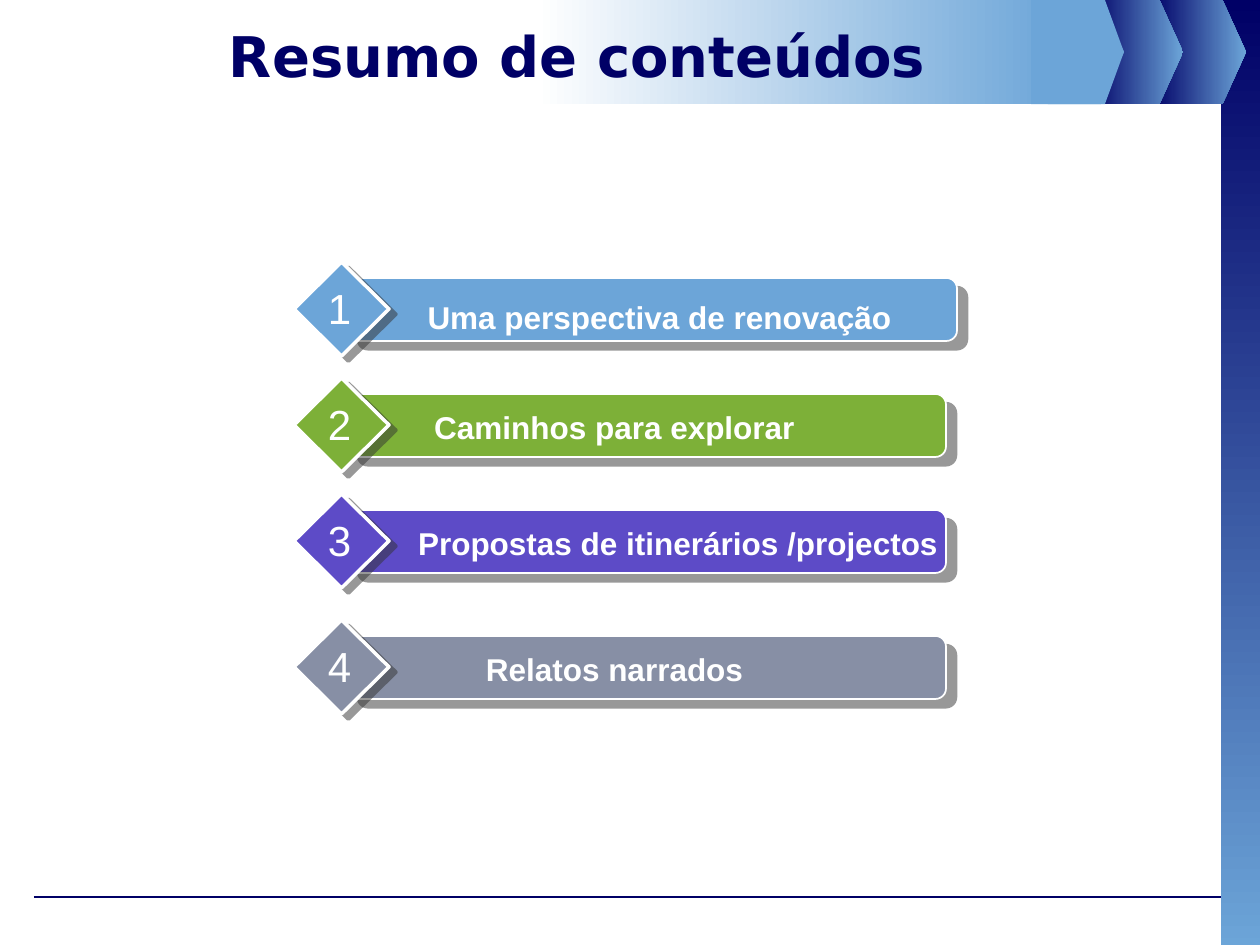
import dataclasses

import lxml.etree
import pptx
import pptx.dml.color
import pptx.enum.shapes
import pptx.enum.text
import pptx.oxml.ns
import pptx.util

SHAPE = pptx.enum.shapes.MSO_SHAPE
ANCHOR = pptx.enum.text.MSO_ANCHOR
AUTO_SIZE = pptx.enum.text.MSO_AUTO_SIZE


@dataclasses.dataclass(frozen=True)
class Theme:
    navy: str = "000066"
    sky: str = "6CA5D8"
    green: str = "7DB038"
    violet: str = "5D4BC7"
    slate: str = "878FA5"
    white: str = "FFFFFF"
    shadow: str = "333333"
    title_font: str = "DejaVu Sans"
    body_font: str = "Arial"
    title_size: int = 32
    number_size: int = 24
    label_size: int = 18


def px(length):
    return pptx.util.Emu(round(length * 914400 / 126))


def rgb(color):
    return pptx.dml.color.RGBColor.from_string(color)


class SlideBuilder:
    def __init__(self, theme, page):
        self.theme = theme
        self.page = page
        self.shapes = page.shapes

    def start_group(self):
        self.shapes = self.page.shapes.add_group_shape().shapes

    def shape(self, kind, left, top, width, height, color=None):
        shape = self.shapes.add_shape(kind, px(left), px(top), px(width), px(height))
        shape.shadow.inherit = False
        shape.line.fill.background()
        if color:
            shape.fill.solid()
            shape.fill.fore_color.rgb = rgb(color)
        return shape

    def gradient(self, shape, start, end, angle=0):
        shape.fill.gradient()
        shape.fill.gradient_angle = angle
        for stop, color in zip(shape.fill.gradient_stops, (start, end)):
            stop.color.rgb = rgb(color)

    def arrow(self, left, width, height, color=None):
        shape = self.shape(SHAPE.PENTAGON, left, 0, width, height, color)
        shape.adjustments[0] = 0.25
        if not color:
            self.gradient(shape, self.theme.navy, self.theme.sky)

    def raised(self, kind, place, color, outline, distance, direction):
        shape = self.shape(kind, *place, color)
        shape.line.color.rgb = rgb(self.theme.white)
        shape.line.width = pptx.util.Pt(outline)
        name = pptx.oxml.ns.qn
        effects = shape._element.spPr.find(name("a:effectLst"))
        shadow = lxml.etree.SubElement(
            effects, name("a:outerShdw"),
            dist=str(pptx.util.Pt(distance)), dir=str(direction * 60000),
            algn="ctr", rotWithShape="0")
        tint = lxml.etree.SubElement(shadow, name("a:srgbClr"), val=self.theme.shadow)
        lxml.etree.SubElement(tint, name("a:alpha"), val="50000")

    def rule(self, left, right, y):
        line = self.shapes.add_connector(
            pptx.enum.shapes.MSO_CONNECTOR.STRAIGHT, px(left), px(y), px(right), px(y))
        line.line.color.rgb = rgb(self.theme.navy)
        line.line.width = pptx.util.Pt(0.75)
        lxml.etree.SubElement(line._element.spPr, pptx.oxml.ns.qn("a:effectLst"))

    def text(self, place, words, size, color, font, bold=False, wrap=True,
             anchor=ANCHOR.TOP, fit=AUTO_SIZE.SHAPE_TO_FIT_TEXT):
        box = self.shapes.add_textbox(*map(px, place))
        frame = box.text_frame
        frame.word_wrap = wrap
        frame.auto_size = fit
        frame.vertical_anchor = anchor
        para = frame.paragraphs[0]
        para.text = words
        para.alignment = pptx.enum.text.PP_ALIGN.CENTER
        para.font.name = font
        para.font.size = pptx.util.Pt(size)
        para.font.bold = bold
        para.font.color.rgb = rgb(color)

    def frame(self):
        theme = self.theme
        self.rule(34, 1221, 897)
        strip = self.shape(SHAPE.RECTANGLE, 1221, 0, 39, 949)
        self.gradient(strip, theme.navy, theme.sky, 270)
        for left in (1152, 1089):
            self.arrow(left, 94, 104)
        self.arrow(1048, 76, 104, theme.sky)
        band = self.shape(SHAPE.RECTANGLE, 536, 0, 527, 104)
        self.gradient(band, theme.white, theme.sky)
        self.arrow(1031, 93, 104, theme.sky)

    def title(self, words):
        theme = self.theme
        self.text((63, 16, 1029, 78), words, theme.title_size, theme.navy,
                  theme.title_font, bold=True, anchor=ANCHOR.MIDDLE, fit=AUTO_SIZE.NONE)

    def topic(self, number, top, color, bar_width, words, label_left, label_drop, label_width):
        theme = self.theme
        self.start_group()
        self.raised(SHAPE.ROUNDED_RECTANGLE, (347, top + 16, bar_width, 63), color, 1, 7.8, 40)
        self.raised(SHAPE.DIAMOND, (294, top, 95, 94), color, 2, 5, 37)
        self.text((label_left, top + label_drop, label_width, 50), words,
                  theme.label_size, theme.white, theme.body_font, bold=True)
        self.text((315, top + 14, 49, 63), str(number),
                  theme.number_size, theme.white, theme.body_font, wrap=False)


def main():
    theme = Theme()
    deck = pptx.Presentation()
    deck.slide_width, deck.slide_height = px(1260), px(945)
    builder = SlideBuilder(theme, deck.slides.add_slide(deck.slide_layouts[6]))
    builder.frame()
    builder.title("Resumo de conteúdos")
    topics = [
        (262, theme.sky, 610, "Uma perspectiva de renovação", 401, 30, 517),
        (378, theme.green, 599, "Caminhos para explorar", 378, 24, 473),
        (494, theme.violet, 599, "Propostas de itinerários /projectos", 378, 24, 600),
        (620, theme.slate, 599, "Relatos narrados", 378, 24, 473),
    ]
    for number, topic in enumerate(topics, 1):
        builder.topic(number, *topic)
    deck.save("out.pptx")


if __name__ == "__main__":
    main()
